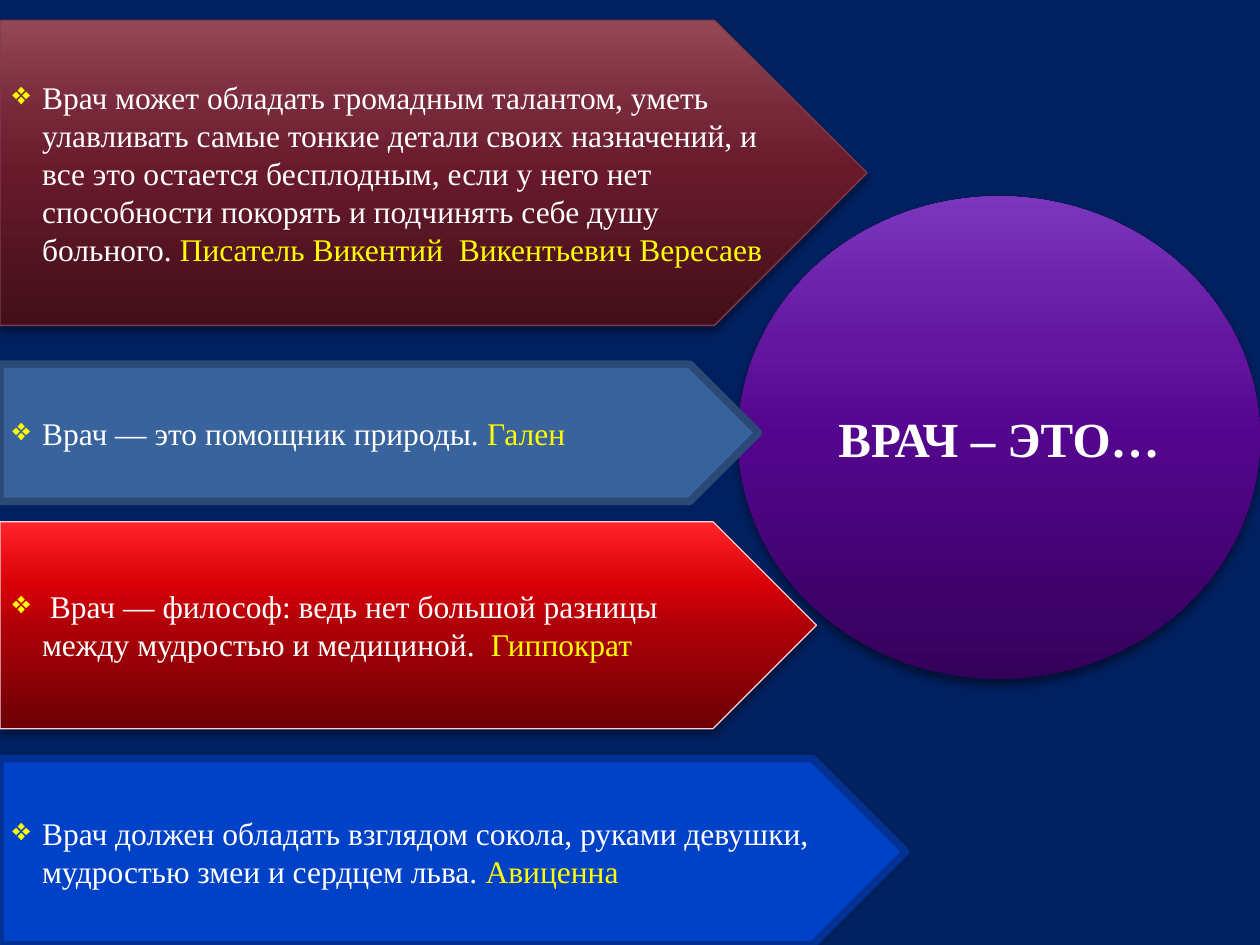
from lxml import etree
from pptx import Presentation
from pptx.dml.color import RGBColor as RGB
from pptx.enum.shapes import MSO_SHAPE as SHAPE
from pptx.enum.text import MSO_ANCHOR as ANCHOR, PP_ALIGN as ALIGN
from pptx.oxml.ns import qn
from pptx.util import Cm, Pt

COLORS = {
    "background": "002060", "text": "FFFFFF", "author": "FFFF00", "shadow": "000000",
    "wine_line": "7D3C4A", "steel": "39639D", "steel_line": "2A4974",
    "red_line": "F9D1D3", "blue": "0042C7", "blue_line": "003193",
}
GRADIENTS = {
    "violet": ["34015A", "53068D", "62179E", "7C36BE"],
    "wine": ["420F1A", "681A2B", "772939", "944755"],
    "red": ["6D0005", "B00008", "DA0008", "FF2429"],
}
STOPS = [0, 50, 70, 100]
FONT = "Times New Roman"

QUOTES = [
    (0.41, 17.48, 6.15, "wine", "wine_line", 0.75,
     "Врач может обладать громадным талантом, уметь улавливать самые тонкие детали своих назначений, "
     "и все это остается бесплодным, если у него нет способности покорять и подчинять себе душу больного. ",
     "Писатель Викентий  Викентьевич Вересаев"),
    (7.34, 15.29, 2.77, "steel", "steel_line", 4.33,
     "Врач — это помощник природы. ", "Гален"),
    (10.52, 16.46, 4.17, "red", "red_line", 0.75,
     " Врач — философ: ведь нет большой разницы между мудростью и медициной.  ", "Гиппократ"),
    (15.29, 18.26, 3.76, "blue", "blue_line", 4.33,
     "Врач должен обладать взглядом сокола, руками девушки, мудростью змеи и сердцем льва. ", "Авиценна"),
]


def paint(s, fill, alpha=35, blur=4, dist=3):
    s.shadow.inherit = False
    if fill not in GRADIENTS:
        s.fill.solid()
        s.fill.fore_color.rgb = RGB.from_string(COLORS[fill])
        return
    s.fill.gradient()
    s.fill.gradient_angle = 90
    spPr = s.element.spPr
    stops = spPr.find(qn("a:gradFill")).find(qn("a:gsLst"))
    for stop in list(stops):
        stops.remove(stop)
    for pos, color in zip(STOPS, GRADIENTS[fill]):
        gs = etree.SubElement(stops, qn("a:gs"), pos=str(pos * 1000))
        etree.SubElement(gs, qn("a:srgbClr"), val=color)
    shadow = etree.SubElement(spPr.find(qn("a:effectLst")), qn("a:outerShdw"),
                              blurRad=str(Pt(blur)), dist=str(Pt(dist)), dir="5400000", rotWithShape="0")
    clr = etree.SubElement(shadow, qn("a:srgbClr"), val=COLORS["shadow"])
    etree.SubElement(clr, qn("a:alpha"), val=str(alpha * 1000))


def style(r, size, color, bold=False):
    r.font.name = FONT
    r.font.size = Pt(size)
    r.font.bold = bold
    r.font.color.rgb = RGB.from_string(COLORS[color])


prs = Presentation()
prs.slide_width, prs.slide_height = Cm(25.4), Cm(19.05)
slide = prs.slides.add_slide(prs.slide_layouts[6])
slide.background.fill.solid()
slide.background.fill.fore_color.rgb = RGB.from_string(COLORS["background"])

s = slide.shapes.add_shape(SHAPE.OVAL, Cm(14.88), Cm(3.96), Cm(10.52), Cm(9.73))
s.line.fill.background()
paint(s, "violet", alpha=45, blur=5)
tf = s.text_frame
tf.text = "ВРАЧ – ЭТО…"
tf.vertical_anchor = ANCHOR.MIDDLE
p = tf.paragraphs[0]
p.alignment = ALIGN.CENTER
style(p.runs[0], 28, "text", bold=True)

for top, width, height, fill, line, weight, quote, author in QUOTES:
    s = slide.shapes.add_shape(SHAPE.PENTAGON, 0, Cm(top), Cm(width), Cm(height))
    s.line.color.rgb = RGB.from_string(COLORS[line])
    s.line.width = Pt(weight)
    paint(s, fill)
    tf = s.text_frame
    tf.word_wrap = True
    tf.vertical_anchor = ANCHOR.MIDDLE
    p = tf.paragraphs[0]
    p.text = quote
    p.alignment = ALIGN.LEFT
    pPr = p._p.get_or_add_pPr()
    pPr.set("marL", str(Cm(0.6)))
    pPr.set("indent", str(-Cm(0.6)))
    bullet = etree.SubElement(pPr, qn("a:buClr"))
    etree.SubElement(bullet, qn("a:srgbClr"), val=COLORS["author"])
    etree.SubElement(pPr, qn("a:buChar"), char="❖")
    style(p.runs[0], 18, "text")
    r = p.add_run()
    r.text = author
    style(r, 18, "author")

prs.save("out.pptx")
